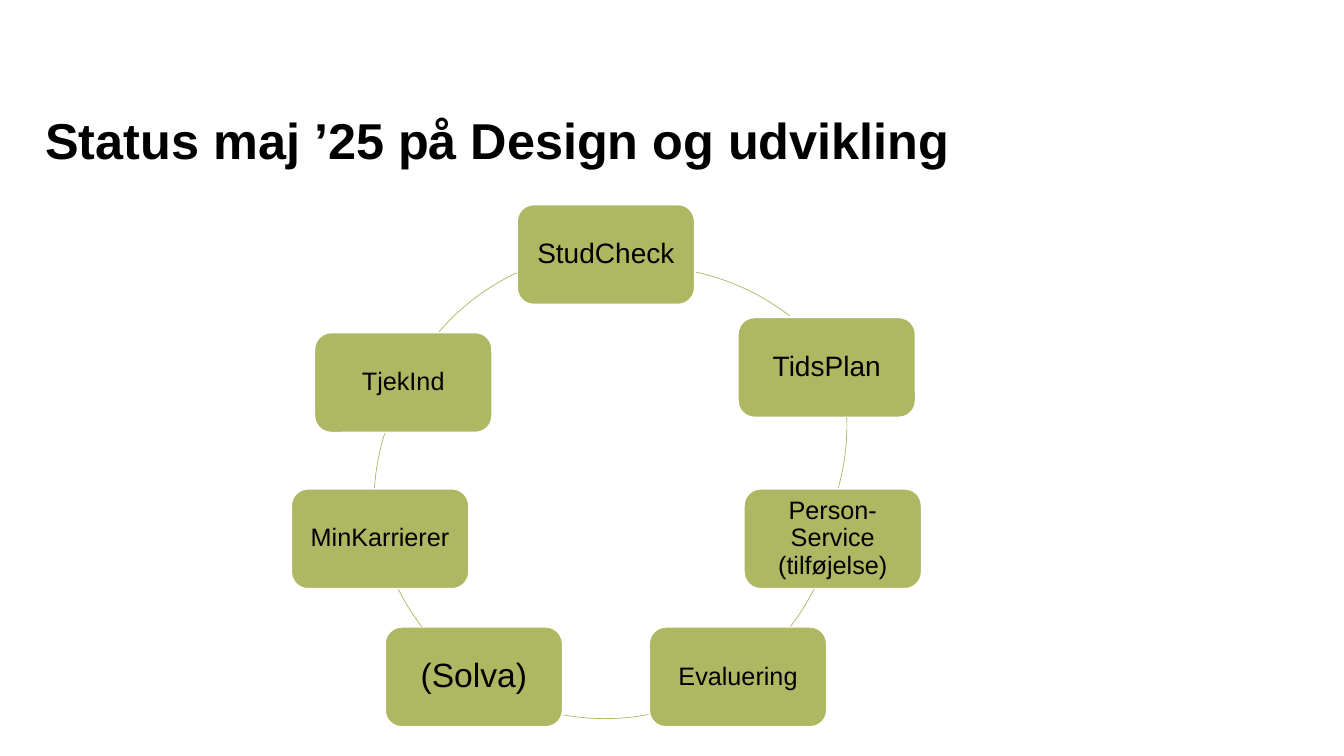
import pptx
import pptx.util
import pptx.dml.color
import pptx.enum.shapes
import pptx.enum.text
from dataclasses import dataclass

EMU_PER_PX = 9144
STEP_WIDTH, STEP_HEIGHT = 176, 99
RING_SIZE = 460
DEGREE_TO_ADJUSTMENT = 0.6


@dataclass(frozen=True)
class Theme:
    font: str = "Arial"
    ink: str = "000000"
    green: str = "AEB862"
    white: str = "FFFFFF"
    title_size: int = 36
    large: int = 24
    medium: int = 20
    small: int = 18
    gap: int = 14
    border: float = 1
    ring: float = 0.5


THEME = Theme()


@dataclass(frozen=True)
class Span:
    text: str
    size: int


@dataclass(frozen=True)
class Step:
    left: int
    top: int
    inset: int
    spans: tuple[Span, ...]


@dataclass(frozen=True)
class Arc:
    left: int
    top: int
    start: float
    end: float


STEPS = (
    Step(513, 203, 8, (Span("StudCheck", THEME.medium),)),
    Step(732, 315, 8, (Span("TidsPlan", THEME.medium),)),
    Step(738, 485, 7, (
        Span("Person-Service", THEME.small),
        Span(" ", THEME.gap),
        Span("(tilføjelse)", THEME.small),
    )),
    Step(644, 622, 7, (Span("Evaluering", THEME.small),)),
    Step(382, 622, 10, (Span("(Solva)", THEME.large),)),
    Step(289, 485, 7, (Span("MinKarrierer", THEME.small),)),
    Step(312, 330, 7, (Span("TjekInd", THEME.small),)),
)

ARCS = (
    Arc(412, 265, 282.1, 307.9),
    Arc(380, 192, 358, 15.6),
    Arc(372, 251, 26.6, 37.8),
    Arc(370, 253, 79.2, 100.3),
    Arc(371, 252, 142.6, 153.7),
    Arc(371, 269, 183.7, 197.7),
    Arc(380, 249, 220.6, 245),
)


def px(length: int) -> pptx.util.Emu:
    return pptx.util.Emu(length * EMU_PER_PX)


def color(value: str) -> pptx.dml.color.RGBColor:
    return pptx.dml.color.RGBColor.from_string(value)


def set_insets(frame, inset: int) -> None:
    frame.margin_left = frame.margin_right = px(inset)
    frame.margin_top = frame.margin_bottom = px(inset)


def add_span(para, span: Span, bold: bool = False) -> None:
    run = para.add_run()
    run.text = span.text
    run.font.name = THEME.font
    run.font.size = pptx.util.Pt(span.size)
    run.font.bold = bold
    run.font.color.rgb = color(THEME.ink)


def set_line(shape, value: str, width: float) -> None:
    shape.line.color.rgb = color(value)
    shape.line.width = pptx.util.Pt(width)
    shape.shadow.inherit = False


def add_title(page, text: str) -> None:
    title = page.shapes.title
    title.left, title.top, title.width, title.height = px(45), px(112), px(1199), px(73)
    frame = title.text_frame
    frame.word_wrap = True
    frame.auto_size = pptx.enum.text.MSO_AUTO_SIZE.NONE
    frame.vertical_anchor = pptx.enum.text.MSO_ANCHOR.TOP
    set_insets(frame, 0)
    para = frame.paragraphs[0]
    para.alignment = pptx.enum.text.PP_ALIGN.LEFT
    para.line_spacing = 0.97
    add_span(para, Span(text, THEME.title_size), bold=True)


def add_step(page, step: Step) -> None:
    box = page.shapes.add_shape(
        pptx.enum.shapes.MSO_SHAPE.ROUNDED_RECTANGLE,
        px(step.left), px(step.top), px(STEP_WIDTH), px(STEP_HEIGHT),
    )
    box.fill.solid()
    box.fill.fore_color.rgb = color(THEME.green)
    set_line(box, THEME.white, THEME.border)
    frame = box.text_frame
    frame.word_wrap = True
    frame.vertical_anchor = pptx.enum.text.MSO_ANCHOR.MIDDLE
    set_insets(frame, step.inset)
    para = frame.paragraphs[0]
    para.alignment = pptx.enum.text.PP_ALIGN.CENTER
    para.line_spacing = 0.9
    for span in step.spans:
        add_span(para, span)


def add_arc(page, arc: Arc) -> None:
    curve = page.shapes.add_shape(
        pptx.enum.shapes.MSO_SHAPE.ARC,
        px(arc.left), px(arc.top), px(RING_SIZE), px(RING_SIZE),
    )
    curve.adjustments[0] = arc.start * DEGREE_TO_ADJUSTMENT
    curve.adjustments[1] = arc.end * DEGREE_TO_ADJUSTMENT
    curve.fill.background()
    set_line(curve, THEME.green, THEME.ring)


def main() -> None:
    deck = pptx.Presentation()
    deck.slide_width, deck.slide_height = px(1333), px(750)
    page = deck.slides.add_slide(deck.slide_layouts.get_by_name("Title Only"))
    page.background.fill.solid()
    page.background.fill.fore_color.rgb = color(THEME.white)
    add_title(page, "Status maj ’25 på Design og udvikling")
    for step, arc in zip(STEPS, ARCS):
        add_step(page, step)
        add_arc(page, arc)
    deck.save("out.pptx")


if __name__ == "__main__":
    main()
